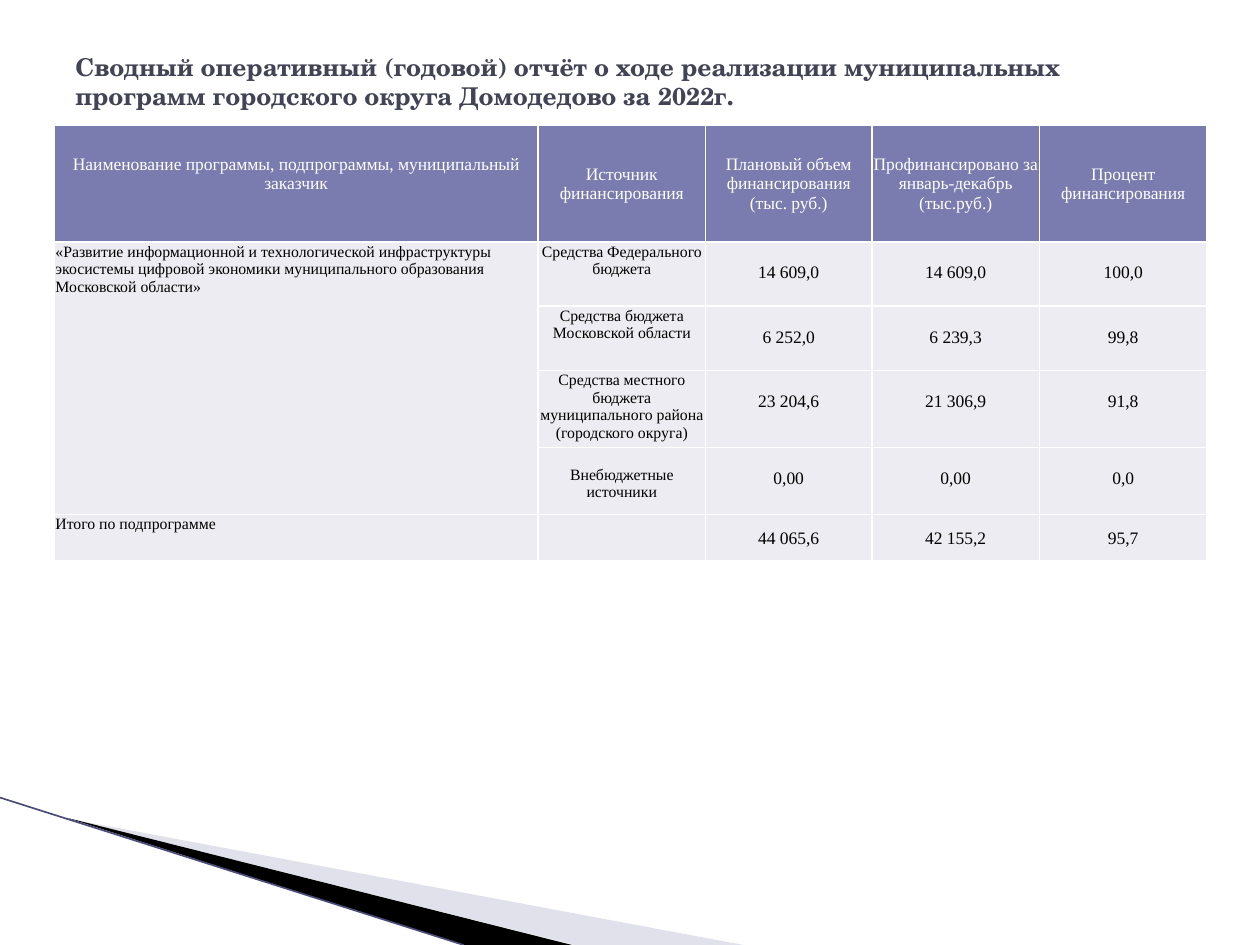
from pptx import Presentation
from pptx.dml.color import RGBColor
from pptx.enum.shapes import MSO_CONNECTOR as Connector
from pptx.enum.text import MSO_ANCHOR as Anchor, PP_ALIGN as Align
from pptx.oxml import parse_xml
from pptx.oxml.ns import nsdecls, qn
from pptx.util import Inches, Pt
from lxml import etree

WHITE = RGBColor(0xFF, 0xFF, 0xFF)
BLACK = RGBColor(0x00, 0x00, 0x00)
TITLE_COLOR = RGBColor(0x42, 0x44, 0x56)
HEADER_FILL = RGBColor(0x7A, 0x7B, 0xAE)
BODY_FILL = RGBColor(0xEC, 0xEC, 0xF2)
PALE_WEDGE = RGBColor(0xB6, 0xB6, 0xD1)
EDGE_LINE = RGBColor(0x4C, 0x4C, 0x78)

TITLE_FONT = "TeX Gyre Schola"
TABLE_FONT = "Times New Roman"
TITLE = ("Сводный оперативный (годовой) отчёт о ходе реализации "
         "муниципальных программ городского округа Домодедово за 2022г.")

HEADERS = [
    "Наименование программы, подпрограммы, муниципальный заказчик",
    "Источник финансирования",
    "Плановый объем финансирования (тыс. руб.)",
    "Профинансировано за январь-декабрь (тыс.руб.)",
    "Процент финансирования",
]
PROGRAM = ("«Развитие информационной и технологической инфраструктуры экосистемы "
           "цифровой экономики муниципального образования Московской области»")
SOURCES = [
    ("Средства Федерального бюджета", "14 609,0", "14 609,0", "100,0"),
    ("Средства бюджета Московской области", "6 252,0", "6 239,3", "99,8"),
    ("Средства местного бюджета муниципального района (городского округа)",
     "23 204,6", "21 306,9", "91,8"),
    ("Внебюджетные источники", "0,00", "0,00", "0,0"),
]
TOTALS = ["Итого по подпрограмме", "", "44 065,6", "42 155,2", "95,7"]

COLUMN_WIDTHS = [3.84, 1.33, 1.32, 1.33, 1.33]
ROW_HEIGHTS = [0.93, 0.51, 0.51, 0.51, 0.53, 0.37]
INSET = 0.01
LINE_9PT = 0.14
LINE_10PT = 0.16


def add_run(paragraph, text, font_name, size, color, bold=False):
    run = paragraph.add_run()
    run.text = text
    run.font.name = font_name
    run.font.size = Pt(size)
    run.font.bold = bold
    run.font.color.rgb = color


def add_wedge(slide, left, top, points, color, opacity=None):
    """Draw a filled outline; points are in inches from left and top."""
    corners = [(Inches(left + x), Inches(top + y)) for x, y in points]
    builder = slide.shapes.build_freeform(*corners[0], scale=1.0)
    builder.add_line_segments(corners[1:], close=True)
    wedge = builder.convert_to_shape()
    wedge.shadow.inherit = False
    wedge.fill.solid()
    wedge.fill.fore_color.rgb = color
    wedge.line.fill.background()
    if opacity is not None:
        color_element = wedge.fill._xPr.find(".//" + qn("a:srgbClr"))
        etree.SubElement(color_element, qn("a:alpha"), val=str(opacity * 1000))


def add_corner_decoration(slide, left, top, width, height):
    # Pale and black wedges
    add_wedge(slide, left, top,
              [(0.55, 0.17), (width, height), (4.56, height)], PALE_WEDGE, 40)
    add_wedge(slide, left, top,
              [(0.53, 0.16), (4.54, height), (3.68, height)], BLACK)
    # Thin edge
    edge = slide.shapes.add_connector(
        Connector.STRAIGHT, Inches(left), Inches(top),
        Inches(left + 3.68), Inches(top + height))
    edge.line.color.rgb = EDGE_LINE
    edge.line.width = Pt(0.95)
    etree.SubElement(edge._element.spPr, qn("a:effectLst"))


def add_title(slide, left, top, width, height):
    box = slide.shapes.add_textbox(
        Inches(left), Inches(top), Inches(width), Inches(height))
    frame = box.text_frame
    frame.word_wrap = True
    frame.vertical_anchor = Anchor.MIDDLE
    add_run(frame.paragraphs[0], TITLE, TITLE_FONT, 14, TITLE_COLOR, bold=True)


def style_cell(cell, fill):
    """Give a cell white borders, narrow margins and a solid fill."""
    properties = cell._tc.get_or_add_tcPr()
    for side in ("lnL", "lnR", "lnT", "lnB"):
        properties.append(parse_xml(
            f'<a:{side} {nsdecls("a")} w="12700"><a:solidFill>'
            f'<a:srgbClr val="{WHITE}"/></a:solidFill></a:{side}>'))
    cell.margin_left = cell.margin_right = cell.margin_top = Inches(INSET)
    cell.margin_bottom = 0
    cell.fill.solid()
    cell.fill.fore_color.rgb = fill


def write_cell(cell, text, size, color=BLACK, align=Align.CENTER, anchor=Anchor.TOP):
    cell.vertical_anchor = anchor
    paragraph = cell.text_frame.paragraphs[0]
    paragraph.alignment = align
    if text:
        add_run(paragraph, text, TABLE_FONT, size, color)


def add_funding_table(slide, left, top):
    table = slide.shapes.add_table(
        len(ROW_HEIGHTS), len(COLUMN_WIDTHS), Inches(left), Inches(top),
        Inches(sum(COLUMN_WIDTHS)), Inches(sum(ROW_HEIGHTS))).table
    table.first_row = table.horz_banding = False
    for column, width in zip(table.columns, COLUMN_WIDTHS):
        column.width = Inches(width)
    for index, (row, height) in enumerate(zip(table.rows, ROW_HEIGHTS)):
        row.height = Inches(height)
        for cell in row.cells:
            style_cell(cell, BODY_FILL if index else HEADER_FILL)

    # Header row
    for column, text in enumerate(HEADERS):
        write_cell(table.cell(0, column), text, 10, WHITE, anchor=Anchor.MIDDLE)
    table.cell(0, 0).margin_bottom = Inches(LINE_10PT)

    # Programme name beside its four sources
    table.cell(1, 0).merge(table.cell(len(SOURCES), 0))
    write_cell(table.cell(1, 0), PROGRAM, 9, align=Align.LEFT)
    for row, (source, *values) in enumerate(SOURCES, start=1):
        write_cell(table.cell(row, 1), source, 9)
        for column, value in enumerate(values, start=2):
            cell = table.cell(row, column)
            write_cell(cell, value, 10)
            cell.margin_top = Inches(INSET + LINE_10PT)
    table.cell(len(SOURCES), 1).margin_top = Inches(INSET + LINE_9PT)

    # Totals row
    last = len(ROW_HEIGHTS) - 1
    write_cell(table.cell(last, 0), TOTALS[0], 9, align=Align.LEFT)
    for column, text in enumerate(TOTALS[1:], start=1):
        write_cell(table.cell(last, column), text, 10, anchor=Anchor.MIDDLE)


def main():
    presentation = Presentation()
    presentation.slide_width = Inches(10)
    presentation.slide_height = Inches(7.5)
    slide = presentation.slides.add_slide(presentation.slide_layouts[6])
    add_corner_decoration(slide, 0, 6.33, 5.9, 1.17)
    add_title(slide, 0.5, 0.3, 9, 0.69)
    add_funding_table(slide, 0.43, 0.99)
    presentation.save("out.pptx")


if __name__ == "__main__":
    main()
